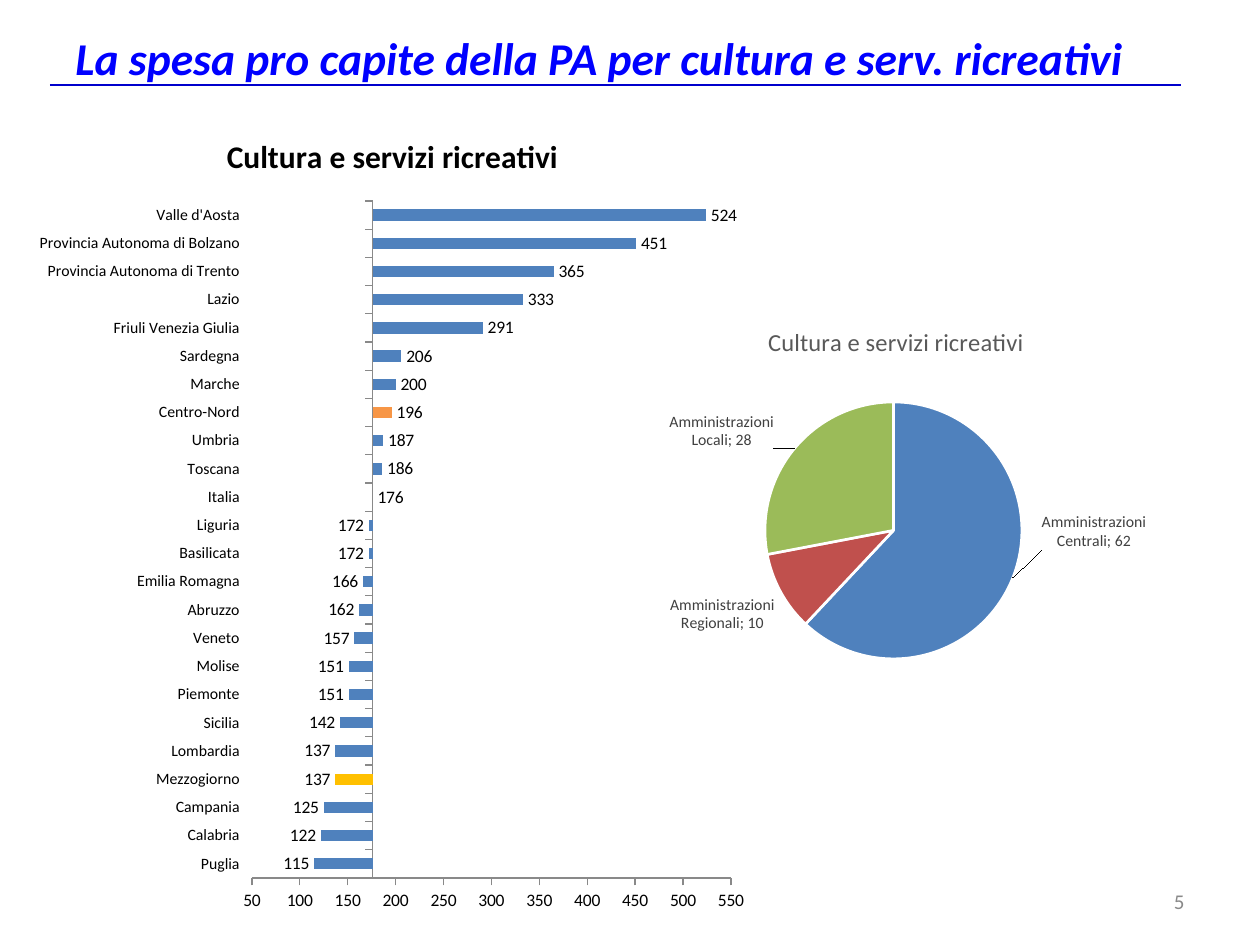
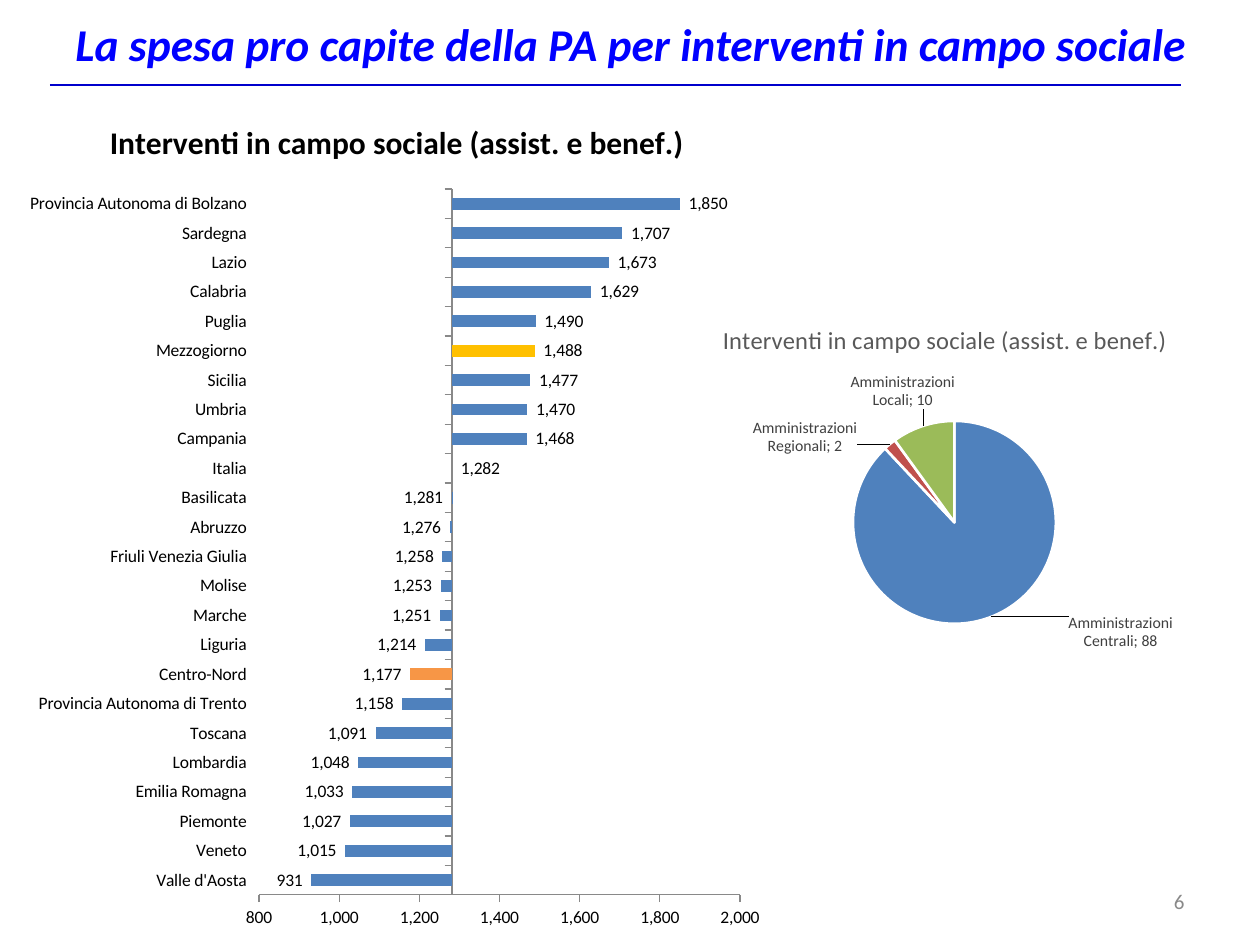
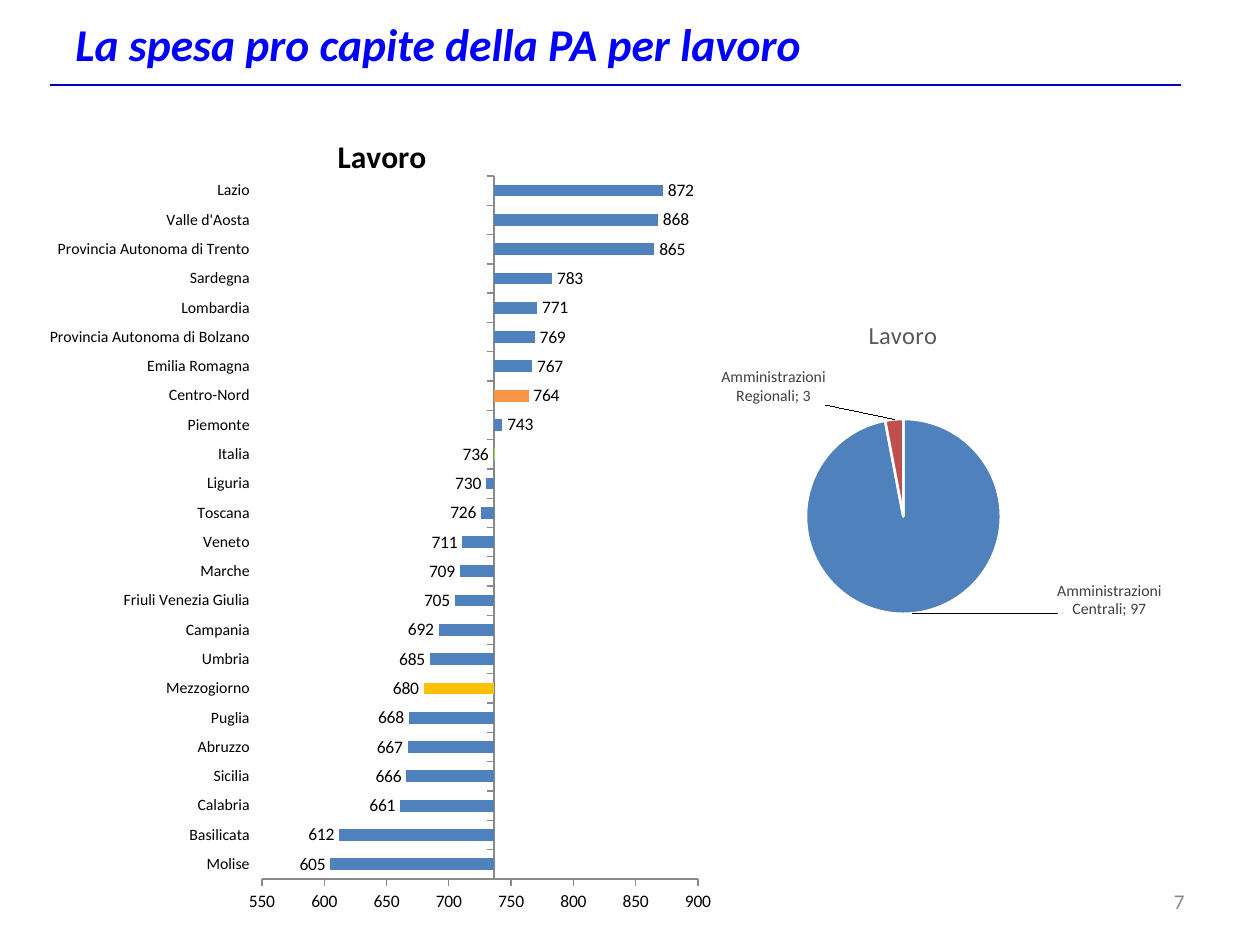
import lxml.etree
import pptx
import pptx.chart.data
import pptx.dml.color
import pptx.enum.chart
import pptx.enum.shapes
import pptx.enum.text
import pptx.oxml.ns
import pptx.util

RGB = pptx.dml.color.RGBColor
BLUE = RGB(0x00, 0x00, 0xFF)
NAVY = RGB(0x00, 0x00, 0xCC)
BLACK = RGB(0x00, 0x00, 0x00)
WHITE = RGB(0xFF, 0xFF, 0xFF)
GREY = RGB(0x89, 0x89, 0x89)
SLATE = RGB(0x59, 0x59, 0x59)
DARK = RGB(0x40, 0x40, 0x40)
STEEL = RGB(0x4F, 0x81, 0xBD)
BRICK = RGB(0xC0, 0x50, 0x4D)
OLIVE = RGB(0x9B, 0xBB, 0x59)
GOLD = RGB(0xFF, 0xC0, 0x00)
LIME = RGB(0x92, 0xD0, 0x50)
ORANGE = RGB(0xF7, 0x96, 0x46)

FONT = "Calibri"
SCALE = 914400 / 126
MARKS = {"Mezzogiorno": GOLD, "Italia": LIME, "Centro-Nord": ORANGE}
LEVELS = {
    "Amministrazioni Centrali": STEEL,
    "Amministrazioni Regionali": BRICK,
    "Amministrazioni Locali": OLIVE,
}
WHOLE = "0"
COMMA = '_-* #,##0_-;\\-* #,##0_-;_-* "-"??_-;_-@_'

CULTURE = {
    "Puglia": 115, "Calabria": 122, "Campania": 125, "Mezzogiorno": 137,
    "Lombardia": 137, "Sicilia": 142, "Piemonte": 151, "Molise": 151,
    "Veneto": 157, "Abruzzo": 162, "Emilia Romagna": 166, "Basilicata": 172,
    "Liguria": 172, "Italia": 176, "Toscana": 186, "Umbria": 187,
    "Centro-Nord": 196, "Marche": 200, "Sardegna": 206,
    "Friuli Venezia Giulia": 291, "Lazio": 333,
    "Provincia Autonoma di Trento": 365,
    "Provincia Autonoma di Bolzano": 451, "Valle d'Aosta": 524,
}
SOCIAL = {
    "Valle d'Aosta": 931, "Veneto": 1015, "Piemonte": 1027,
    "Emilia Romagna": 1033, "Lombardia": 1048, "Toscana": 1091,
    "Provincia Autonoma di Trento": 1158, "Centro-Nord": 1177,
    "Liguria": 1214, "Marche": 1251, "Molise": 1253,
    "Friuli Venezia Giulia": 1258, "Abruzzo": 1276, "Basilicata": 1281,
    "Italia": 1282, "Campania": 1468, "Umbria": 1470, "Sicilia": 1477,
    "Mezzogiorno": 1488, "Puglia": 1490, "Calabria": 1629, "Lazio": 1673,
    "Sardegna": 1707, "Provincia Autonoma di Bolzano": 1850,
}
LABOUR = {
    "Molise": 605, "Basilicata": 612, "Calabria": 661, "Sicilia": 666,
    "Abruzzo": 667, "Puglia": 668, "Mezzogiorno": 680, "Umbria": 685,
    "Campania": 692, "Friuli Venezia Giulia": 705, "Marche": 709,
    "Veneto": 711, "Toscana": 726, "Liguria": 730, "Italia": 736,
    "Piemonte": 743, "Centro-Nord": 764, "Emilia Romagna": 767,
    "Provincia Autonoma di Bolzano": 769, "Lombardia": 771,
    "Sardegna": 783, "Provincia Autonoma di Trento": 865,
    "Valle d'Aosta": 868, "Lazio": 872,
}


def px(*sizes):
    return [pptx.util.Emu(round(size * SCALE)) for size in sizes]


def style(font, size, color, bold=False, italic=False):
    font.name = FONT
    font.size = pptx.util.Pt(size)
    font.color.rgb = color
    font.bold = bold
    font.italic = italic


def add_text(slide, box, text, align, *look):
    frame = slide.shapes.add_textbox(*px(*box)).text_frame
    frame.word_wrap = True
    frame.vertical_anchor = pptx.enum.text.MSO_ANCHOR.MIDDLE
    par = frame.paragraphs[0]
    par.text = text
    par.alignment = align
    style(par.font, *look)


def add_rule(slide):
    kind = pptx.enum.shapes.MSO_CONNECTOR.STRAIGHT
    rule = slide.shapes.add_connector(kind, *px(50, 85, 1181, 85))
    rule.line.color.rgb = NAVY
    rule.line.width = pptx.util.Pt(0.75)
    lxml.etree.SubElement(rule._element.spPr, pptx.oxml.ns.qn("a:effectLst"))


def add_frame(deck, title, depth, number):
    slide = deck.slides.add_slide(deck.slide_layouts[6])
    align = pptx.enum.text.PP_ALIGN
    add_text(slide, (63, 0, 1172, depth), title, align.LEFT,
             26, BLUE, True, True)
    add_text(slide, (903, 876, 294, 50), str(number), align.RIGHT, 12, GREY)
    add_rule(slide)
    return slide


def set_layout(node, spot, **parts):
    """Give a chart part a manual layout, as the child at index spot."""
    qn = pptx.oxml.ns.qn
    old = node.find(qn("c:layout"))
    if old is not None:
        node.remove(old)
    layout = lxml.etree.Element(qn("c:layout"))
    manual = lxml.etree.SubElement(layout, qn("c:manualLayout"))
    for name, value in parts.items():
        if not isinstance(value, str):
            value = f"{value:.4f}"
        lxml.etree.SubElement(manual, qn(f"c:{name}")).set("val", value)
    node.insert(spot, layout)


def add_chart(slide, kind, box, plot, title, data, look):
    source = pptx.chart.data.CategoryChartData()
    source.categories = list(data)
    source.add_series(title, list(data.values()))
    chart = slide.shapes.add_chart(kind, *px(*box), source).chart
    style(chart.font, 10, BLACK)
    chart.has_legend = False
    chart.has_title = True
    head = chart.chart_title.text_frame
    head.text = title
    style(head.paragraphs[0].font, *look)
    left, top, wide, high = box
    area = chart._chartSpace.chart.plotArea
    set_layout(area, 0, layoutTarget="inner", xMode="edge", yMode="edge",
               x=(plot[0] - left) / wide, y=(plot[1] - top) / high,
               w=plot[2] / wide, h=plot[3] / high)
    return chart


def set_axis(axis, size):
    axis.has_major_gridlines = False
    axis.major_tick_mark = pptx.enum.chart.XL_TICK_MARK.OUTSIDE
    axis.minor_tick_mark = pptx.enum.chart.XL_TICK_MARK.NONE
    axis.format.line.color.rgb = GREY
    axis.format.line.width = pptx.util.Pt(0.75)
    style(axis.tick_labels.font, size, BLACK)


def add_bars(slide, box, plot, title, data, span, cross, form, size=9):
    """Draw ranked bars that start from the national mean."""
    enum = pptx.enum.chart
    chart = add_chart(slide, enum.XL_CHART_TYPE.BAR_CLUSTERED, box, plot,
                      title, data, (18, BLACK, True))
    bars = chart.plots[0]
    bars.gap_width = 150
    bars.vary_by_categories = False
    set_axis(chart.category_axis, size)
    chart.category_axis.tick_label_position = enum.XL_TICK_LABEL_POSITION.LOW
    axis = chart.value_axis
    set_axis(axis, 10)
    axis.minimum_scale, axis.maximum_scale, axis.major_unit = span
    axis.crosses_at = cross
    axis.tick_labels.number_format = form
    axis.tick_labels.number_format_is_linked = False

    series = bars.series[0]
    series.invert_if_negative = False
    series.format.fill.solid()
    series.format.fill.fore_color.rgb = STEEL
    for i, name in enumerate(data):
        if name in MARKS:
            fill = series.points[i].format.fill
            fill.solid()
            fill.fore_color.rgb = MARKS[name]
    labels = series.data_labels
    labels.show_value = True
    labels.position = enum.XL_LABEL_POSITION.OUTSIDE_END
    labels.number_format = form
    labels.number_format_is_linked = False
    style(labels.font, 10, BLACK)


def add_pie(slide, box, plot, title, shares, shifts):
    """Draw the shares, each label moved by its shift in px."""
    enum = pptx.enum.chart
    chart = add_chart(slide, enum.XL_CHART_TYPE.PIE, box, plot, title,
                      dict(zip(LEVELS, shares)), (14, SLATE))
    series = chart.plots[0].series[0]
    labels = series.data_labels
    labels.show_value = True
    labels.show_category_name = True
    labels.number_format = WHOLE
    labels.number_format_is_linked = False
    style(labels.font, 9, DARK)
    for i, color in enumerate(LEVELS.values()):
        point = series.points[i]
        point.format.fill.solid()
        point.format.fill.fore_color.rgb = color
        point.format.line.color.rgb = WHITE
        point.format.line.width = pptx.util.Pt(1.5)
        style(point.data_label.font, 9, DARK)
        point.data_label.position = enum.XL_LABEL_POSITION.OUTSIDE_END

    qn = pptx.oxml.ns.qn
    tags = chart._chartSpace.iter(qn("c:dLbl"))
    for tag, share, (right, down) in zip(list(tags), shares, shifts):
        shown = "1" if share else "0"
        tag.find(qn("c:showVal")).set("val", shown)
        tag.find(qn("c:showCatName")).set("val", shown)
        if right or down:
            set_layout(tag, 1, x=right / box[2], y=down / box[3])


def add_culture(deck):
    slide = add_frame(
        deck, "La spesa pro capite della PA per cultura e serv. ricreativi",
        115, 5)
    title = "Cultura e servizi ricreativi"
    add_bars(slide, (25, 106, 735, 820), (252, 201, 479, 677), title,
             CULTURE, (50, 550, 50), 176, WHOLE)
    add_pie(slide, (581, 306, 630, 378), (765, 402, 257, 257), title,
            (62, 10, 28), ((22, -67), (0, 0), (-15, 6)))


def add_social(deck):
    slide = add_frame(
        deck, "La spesa pro capite della PA per interventi in campo sociale",
        86, 6)
    title = "Interventi in campo sociale (assist. e benef.)"
    add_bars(slide, (15, 91, 764, 853), (259, 189, 481, 706), title,
             SOCIAL, (800, 2000, 200), 1282, COMMA, 10)
    add_pie(slide, (630, 304, 630, 378), (853, 421, 203, 203), title,
            (88, 2, 10), ((74, -10), (-28, 17), (34, -9)))


def add_labour(deck):
    slide = add_frame(deck, "La spesa pro capite della PA per lavoro", 86, 7)
    title = "Lavoro"
    add_bars(slide, (35, 106, 694, 820), (262, 176, 436, 703), title,
             LABOUR, (550, 900, 50), 736.4, WHOLE)
    add_pie(slide, (588, 299, 630, 378), (806, 419, 195, 195), title,
            (97, 3, 0), ((144, -39), (-68, -7), (0, 0)))


def main():
    deck = pptx.Presentation()
    deck.slide_width, deck.slide_height = px(1260, 945)
    add_culture(deck)
    add_social(deck)
    add_labour(deck)
    deck.save("out.pptx")


if __name__ == "__main__":
    main()
